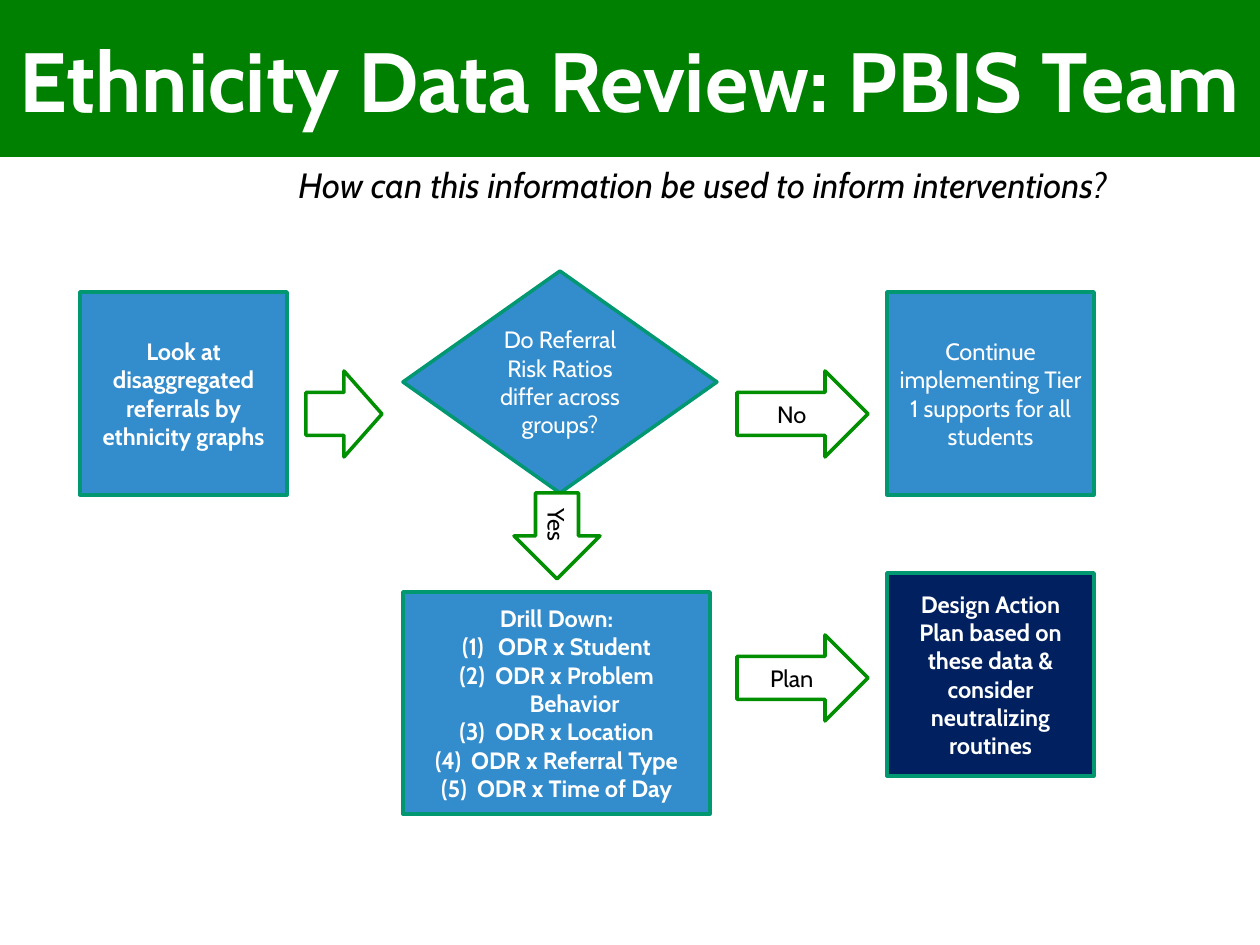
"""Build the ethnicity data review flowchart slide."""
from lxml import etree
from pptx import Presentation
from pptx import util as u
from pptx.dml.color import RGBColor
from pptx.enum import shapes, text
from pptx.oxml.ns import qn

SCALE = 914400 / 126
COLORS = {
    "banner": "008000", "step": "0070C0", "plan": "002060", "border": "009771",
    "arrow": "008F00", "white": "FFFFFF", "black": "000000",
}
KINDS = shapes.MSO_SHAPE


def px(*lengths):
    return [u.Emu(round(length * SCALE)) for length in lengths]


def write(shape, content, size=13.5, color="white", bold=False, italic=False,
          align=text.PP_ALIGN.CENTER, anchor=text.MSO_ANCHOR.MIDDLE, numbered_from=None):
    frame = shape.text_frame
    frame.word_wrap = True
    frame.vertical_anchor = anchor
    frame.text = content
    for index, paragraph in enumerate(frame.paragraphs):
        paragraph.alignment = align
        if numbered_from is not None and index >= numbered_from:
            properties = paragraph._p.get_or_add_pPr()
            indent = px(36)[0]
            properties.set("marL", str(indent))
            properties.set("indent", str(-indent))
            etree.SubElement(properties, qn("a:buFont"), typeface="+mj-lt")
            etree.SubElement(properties, qn("a:buAutoNum"), type="arabicParenBoth")
        for run in paragraph.runs:
            run.font.name = "Cabin"
            run.font.size = u.Pt(size)
            run.font.bold = bold
            run.font.italic = italic
            run.font.color.rgb = RGBColor.from_string(COLORS[color])


presentation = Presentation()
presentation.slide_width, presentation.slide_height = px(1260, 945)
slide = presentation.slides.add_slide(presentation.slide_layouts[6])

drill_down = "\n".join([
    "Drill Down:", "ODR x Student", "ODR x Problem Behavior", "ODR x Location",
    "ODR x Referral Type", "ODR x Time of Day",
])
design_plan = "Design Action Plan based on these data & consider neutralizing routines"

# kind, box, fill, border, opacity, rotation, content, format
items = [
    (KINDS.RECTANGLE, (0, 0, 1260, 157), "banner", None, 100, 0,
     "Ethnicity Data Review: PBIS Team", {"size": 48, "bold": True}),
    (KINDS.RECTANGLE, (80, 292, 207, 203), "step", "border", 80, 0,
     "Look at disaggregated referrals by ethnicity graphs", {"bold": True}),
    (KINDS.DIAMOND, (403, 271, 314, 222), "step", "border", 80, 0,
     "Do Referral Risk Ratios differ across groups?", {}),
    (KINDS.RECTANGLE, (887, 292, 207, 203), "step", "border", 80, 0,
     "Continue implementing Tier 1 supports for all students", {}),
    (KINDS.RIGHT_ARROW, (737, 371, 131, 86), "white", "arrow", 100, 0,
     "No", {"color": "black"}),
    (KINDS.RIGHT_ARROW, (306, 371, 76, 86), "white", "arrow", 100, 0, "", {}),
    (KINDS.RECTANGLE, (403, 592, 307, 222), "step", "border", 80, 0,
     drill_down, {"bold": True, "numbered_from": 1}),
    (KINDS.RECTANGLE, (887, 573, 207, 203), "plan", "border", 100, 0,
     design_plan, {"bold": True}),
    (KINDS.RIGHT_ARROW, (737, 635, 131, 86), "white", "arrow", 100, 0,
     "Plan", {"color": "black"}),
    (KINDS.RIGHT_ARROW, (514, 493, 86, 86), "white", "arrow", 100, 90,
     "Yes", {"color": "black"}),
]

for kind, box, fill, border, opacity, rotation, content, style in items:
    shape = slide.shapes.add_shape(kind, *px(*box))
    shape.shadow.inherit = False
    shape.rotation = rotation
    shape.fill.solid()
    shape.fill.fore_color.rgb = RGBColor.from_string(COLORS[fill])
    if opacity < 100:
        fill_color = shape._element.spPr.find(qn("a:solidFill")).find(qn("a:srgbClr"))
        etree.SubElement(fill_color, qn("a:alpha"), val=str(opacity * 1000))
    if border:
        shape.line.color.rgb = RGBColor.from_string(COLORS[border])
        shape.line.width = u.Pt(2)
    else:
        shape.line.fill.background()
    if content:
        write(shape, content, **style)

question = slide.shapes.add_textbox(*px(286, 157, 948, 55))
write(question, "How can this information be used to inform interventions?", size=20,
      color="black", italic=True, align=text.PP_ALIGN.LEFT, anchor=text.MSO_ANCHOR.TOP)

presentation.save("out.pptx")
